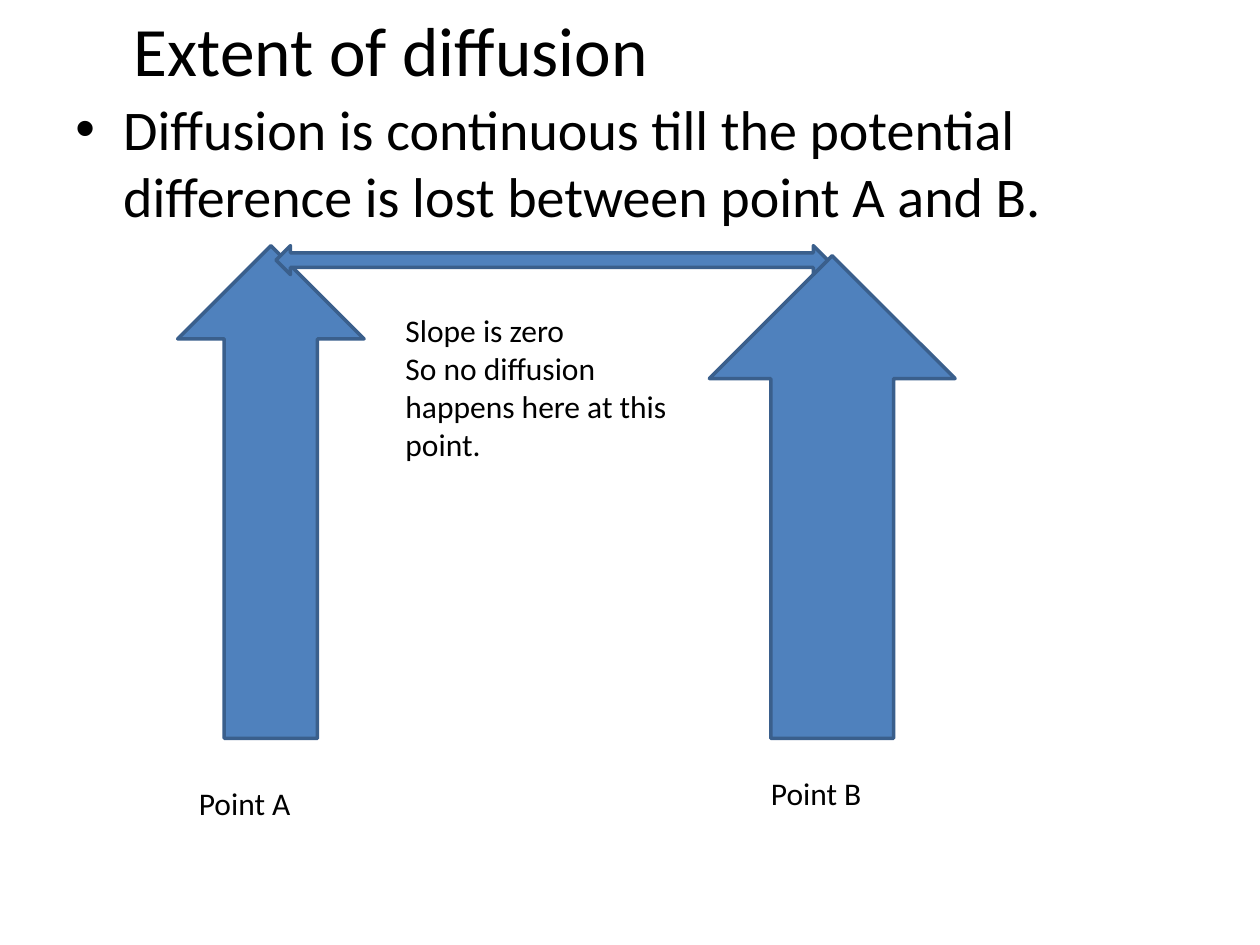
from dataclasses import dataclass

from lxml import etree
from pptx import Presentation
from pptx.dml.color import RGBColor
from pptx.enum.shapes import MSO_SHAPE
from pptx.enum.text import MSO_ANCHOR, PP_ALIGN
from pptx.oxml.ns import qn
from pptx.util import Inches, Pt

UP_ARROW = MSO_SHAPE.UP_ARROW
DOUBLE_ARROW = MSO_SHAPE.LEFT_RIGHT_ARROW
LEFT, CENTER = PP_ALIGN.LEFT, PP_ALIGN.CENTER
TOP, MIDDLE = MSO_ANCHOR.TOP, MSO_ANCHOR.MIDDLE
WIDTH, HEIGHT = 10, 7.5


@dataclass(frozen=True)
class Theme:
    """Colours, font and type sizes of the slide."""

    ink: RGBColor = RGBColor(0x00, 0x00, 0x00)
    fill: RGBColor = RGBColor(0x4F, 0x81, 0xBD)
    outline: RGBColor = RGBColor(0x3A, 0x5F, 0x8C)
    font: str = "Calibri"
    title: float = 39.6
    body: float = 32
    label: float = 18
    line: float = 2


THEME = Theme()


def place(left, top, width, height):
    """Turn inches on the slide into lengths."""
    return [Inches(value) for value in (left, top, width, height)]


def add_bullet(para, indent):
    """Give a paragraph a round bullet with a hanging indent."""
    properties = para._p.get_or_add_pPr()
    properties.set("marL", str(Inches(indent)))
    properties.set("indent", str(-Inches(indent)))
    etree.SubElement(properties, qn("a:buFont"), typeface="Arial")
    etree.SubElement(properties, qn("a:buChar"), char="•")


def add_text(page, text, area, size=THEME.label, align=LEFT, anchor=TOP, bullet_indent=0):
    """Add a wrapped text box with one paragraph for each line of text."""
    box = page.shapes.add_textbox(*place(*area))
    frame = box.text_frame
    frame.word_wrap = True
    frame.vertical_anchor = anchor
    frame.text = text
    for para in frame.paragraphs:
        para.alignment = align
        if bullet_indent:
            add_bullet(para, bullet_indent)
        for span in para.runs:
            span.font.name = THEME.font
            span.font.size = Pt(size)
            span.font.color.rgb = THEME.ink
    return box


def add_arrow(page, kind, area):
    """Add a filled block arrow."""
    arrow = page.shapes.add_shape(kind, *place(*area))
    arrow.shadow.inherit = False
    arrow.fill.solid()
    arrow.fill.fore_color.rgb = THEME.fill
    arrow.line.color.rgb = THEME.outline
    arrow.line.width = Pt(THEME.line)
    return arrow


def main():
    """Build the diffusion slide and save it."""
    deck = Presentation()
    deck.slide_width, deck.slide_height = Inches(WIDTH), Inches(HEIGHT)
    page = deck.slides.add_slide(deck.slide_layouts[6])

    add_text(page, "Extent of diffusion ", (0, 0, 6.33, 0.77),
             size=THEME.title, align=CENTER, anchor=MIDDLE)
    add_text(page, "Diffusion is continuous till the potential difference "
             "is lost between point A and B.", (0.5, 0.7, 9.34, 6.56),
             size=THEME.body, bullet_indent=0.38)

    base = 5.86
    for left, top, width in ((1.41, 1.95, 1.48), (5.63, 2.03, 1.95)):
        add_arrow(page, UP_ARROW, (left, top, width, base - top))
    add_arrow(page, DOUBLE_ARROW, (2.19, 1.95, 4.38, 0.23))

    add_text(page, "Point A", (1.48, 6.17, 1.41, 0.4))
    add_text(page, "Point B", (6.02, 6.09, 1.72, 0.4))
    add_text(page, "Slope is zero\nSo no diffusion happens here at this point.",
             (3.12, 2.42, 2.27, 1.31))
    deck.save("out.pptx")


if __name__ == "__main__":
    main()
